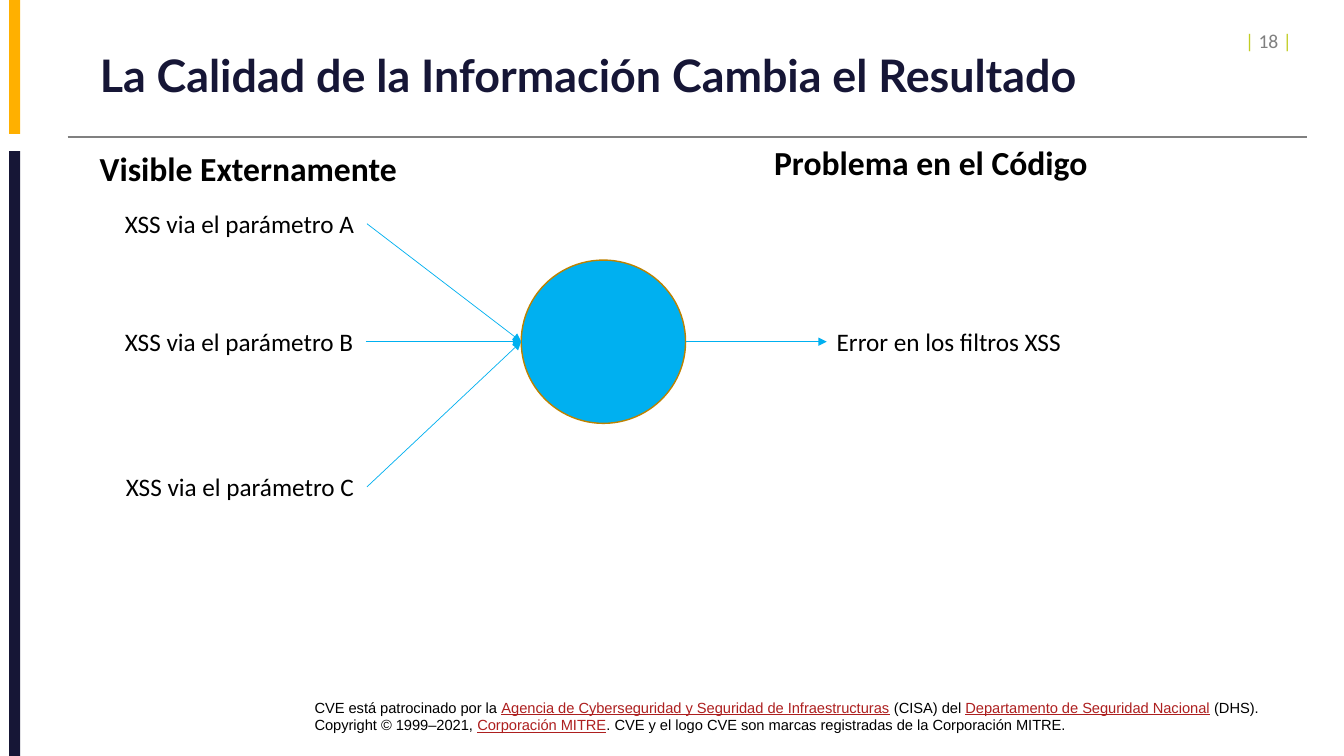
from pptx import Presentation
from pptx.dml.color import RGBColor
from pptx.enum.shapes import MSO_CONNECTOR, MSO_SHAPE
from pptx.enum.text import MSO_ANCHOR, PP_ALIGN
from pptx.oxml.ns import qn
from pptx.util import Inches, Pt
from lxml.etree import SubElement

COLORS = {
    "amber": "FFB000", "navy": "161636", "gray": "808080", "black": "000000",
    "red": "AD1F1F", "blue": "00B0F0", "bronze": "BD8200", "lime": "C1CD23",
}
TITLE = "La Calidad de la Información Cambia el Resultado"
SIDE_BARS = [("amber", 0, 1.33), ("navy", 1.5, 6)]  # color, top, height
HEADINGS = [  # text, left, top, width
    ("Visible Externamente", 0.89, 1.42, 3.18),
    ("Problema en el Código", 7.58, 1.36, 3.34),
]
SYMPTOMS = [
    ("XSS via el parámetro A", 1.14, 2.02, 2.5),
    ("XSS via el parámetro B", 1.14, 3.19, 2.49),
    ("XSS via el parámetro C", 1.15, 4.63, 2.49),
]
CAUSE = ("Error en los filtros XSS", 8.2, 3.19, 2.45)
CIRCLE = (5.17, 2.58, 1.63, 1.62)  # left, top, width, height
FOOTER = [
    ("CVE está patrocinado por la ", "black"),
    ("Agencia de Cyberseguridad y Seguridad de Infraestructuras", "red"),
    (" (CISA) del ", "black"),
    ("Departamento de Seguridad Nacional", "red"),
    (" (DHS). Copyright © 1999–2021, ", "black"),
    ("Corporación MITRE", "red"),
    (". CVE y el logo CVE son marcas registradas de la Corporación MITRE.", "black"),
]
PAGE_NUMBER = [("| ", "lime"), ("18 ", "gray"), ("|", "lime")]


def color(name):
    return RGBColor.from_string(COLORS[name])


def add_runs(para, runs, size, font="Calibri", bold=False):
    for text, tint in runs:
        span = para.add_run()
        span.text = text
        span.font.name = font
        span.font.size = Pt(size)
        span.font.bold = bold
        span.font.underline = tint == "red"
        span.font.color.rgb = color(tint)


def add_text(page, runs, place, size, font="Calibri", bold=False, wrap=False):
    box = page.shapes.add_textbox(*map(Inches, place))
    box.text_frame.word_wrap = wrap
    add_runs(box.text_frame.paragraphs[0], runs, size, font, bold)
    return box


def add_shape(page, kind, place, fill, outline=None):
    shape = page.shapes.add_shape(kind, *map(Inches, place))
    shape.shadow.inherit = False
    shape.fill.solid()
    shape.fill.fore_color.rgb = color(fill)
    if outline:
        shape.line.color.rgb = color(outline)
        shape.line.width = Pt(1)
    else:
        shape.line.fill.background()


def add_line(page, start, end, tint, width, arrow=False):
    line = page.shapes.add_connector(MSO_CONNECTOR.STRAIGHT, *map(Inches, start + end))
    line.line.color.rgb = color(tint)
    line.line.width = Pt(width)
    if arrow:
        SubElement(line.line._get_or_add_ln(), qn("a:tailEnd"), type="triangle")
    SubElement(line._element.spPr, qn("a:effectLst"))
    return line


def main():
    deck = Presentation()
    deck.slide_width, deck.slide_height = Inches(13.33), Inches(7.5)
    page = deck.slides.add_slide(deck.slide_layouts[5])

    for tint, top, height in SIDE_BARS:
        add_shape(page, MSO_SHAPE.RECTANGLE, (0.09, top, 0.11, height), tint)
    add_line(page, (0.67, 1.36), (12.96, 1.36), "gray", 1)

    footer = add_text(page, FOOTER, (3.07, 6.88, 9.6, 0.45), 10.5, "Arial", wrap=True)
    frame = footer.text_frame
    frame.margin_left = frame.margin_right = Inches(0.05)
    frame.margin_top = frame.margin_bottom = Inches(0.05)

    title = page.shapes.title
    title.left, title.top = Inches(0.89), Inches(0.3)
    title.width, title.height = Inches(10.2), Inches(0.95)
    title.text_frame.vertical_anchor = MSO_ANCHOR.MIDDLE
    para = title.text_frame.paragraphs[0]
    para.alignment = PP_ALIGN.LEFT
    para.line_spacing = 0.9
    add_runs(para, [(TITLE, "navy")], 32, "Lato", bold=True)

    for text, left, top, width in HEADINGS:
        add_text(page, [(text, "black")], (left, top, width, 0.5), 24, bold=True)

    add_shape(page, MSO_SHAPE.OVAL, CIRCLE, "blue", "bronze")
    left, top, width, height = CIRCLE
    middle = top + height / 2
    circle_left, circle_right = (left, middle), (left + width, middle)

    for text, left, top, width in SYMPTOMS:
        box = add_text(page, [(text, "black")], (left, top, width, 0.4), 18)
        arrow = add_line(page, (left + width, top + 0.2), circle_left, "blue", 0.5, True)
        arrow.begin_connect(box, 3)

    text, left, top, width = CAUSE
    box = add_text(page, [(text, "black")], (left, top, width, 0.4), 18)
    arrow = add_line(page, circle_right, (left, top + 0.2), "blue", 0.5, True)
    arrow.end_connect(box, 1)

    add_text(page, PAGE_NUMBER, (12.25, 0.24, 0.72, 0.37), 14, wrap=True)
    deck.save("out.pptx")


if __name__ == "__main__":
    main()
